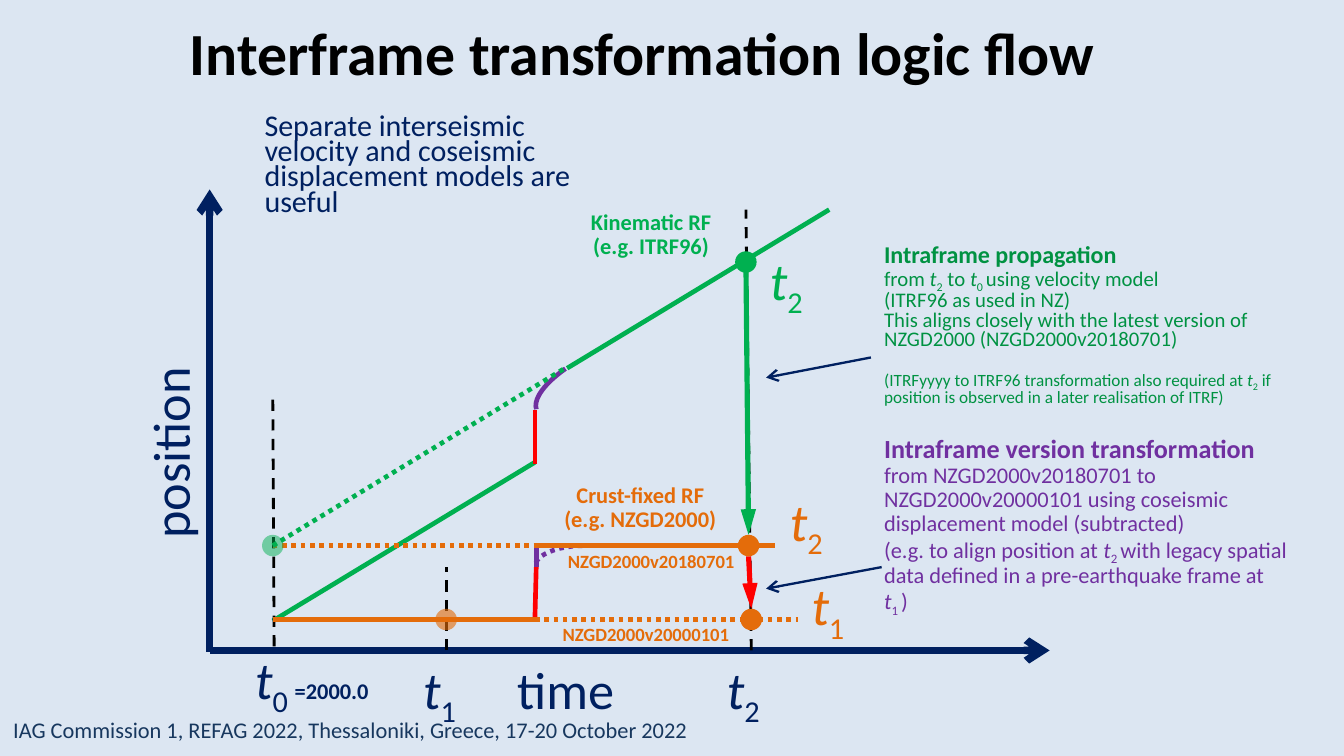
"""Build the slide that explains interframe transformation logic flow."""
from lxml import etree
from pptx import Presentation
from pptx.dml.color import RGBColor
from pptx.enum.dml import MSO_LINE
from pptx.enum.shapes import MSO_CONNECTOR, MSO_SHAPE
from pptx.enum.text import MSO_ANCHOR, PP_ALIGN
from pptx.oxml.ns import qn
from pptx.util import Inches, Pt

STRAIGHT, ARC, OVAL = MSO_CONNECTOR.STRAIGHT, MSO_SHAPE.ARC, MSO_SHAPE.OVAL
DASH, DOT = MSO_LINE.DASH, MSO_LINE.ROUND_DOT
TOP, MIDDLE = MSO_ANCHOR.TOP, MSO_ANCHOR.MIDDLE
LEFT, CENTER = PP_ALIGN.LEFT, PP_ALIGN.CENTER

THEME = {
    "font": "Calibri",
    "color": {"bg": "DCE6F2", "navy": "002060", "green": "00B050", "red": "FF0000",
              "purple": "7030A0", "orange": "E46C0A", "black": "000000",
              "leaf": "009242", "footer": "17375E"},
    "size": {"title": 32, "axis": 28, "lead": 16.1, "head": 14, "subhead": 12.9,
             "body": 12, "detail": 11.1, "frame": 10, "note": 9.2},
    "line": {"axis": 4, "arrow": 2.75, "track": 2.5, "guide": 1.5, "callout": 1.25},
    "head": {"open": {"type": "arrow"}, "solid": {"type": "triangle", "len": "lg"}},
}

# x1, y1, x2, y2, colour, weight, dash, arrowhead
LINES = [
    (1.56, 4.85, 1.56, 1.41, "navy", "axis", None, "open"),
    (1.56, 4.84, 7.81, 4.84, "navy", "axis", None, "open"),
    (2.03, 4.62, 3.98, 3.44, "green", "track", None, None),
    (3.98, 3.45, 3.98, 3.05, "red", "track", None, None),
    (2.04, 4.81, 2.03, 2.97, "black", "guide", DASH, None),
    (5.59, 4.84, 5.55, 1.56, "black", "guide", DASH, None),
    (3.32, 4.84, 3.32, 4.22, "black", "guide", DASH, None),
    (3.98, 4.61, 3.99, 4.22, "red", "track", None, None),
    (3.99, 4.22, 3.99, 4.06, "purple", "track", None, None),
    (3.98, 4.06, 5.77, 4.06, "orange", "track", None, None),
    (2.03, 4.06, 3.98, 4.06, "orange", "track", DOT, None),
    (5.55, 1.95, 5.57, 3.98, "green", "arrow", None, "solid"),
    (2.03, 4.61, 3.98, 4.61, "orange", "track", None, None),
    (3.98, 4.61, 5.94, 4.61, "orange", "track", DOT, None),
    (4.22, 2.74, 6.17, 1.56, "green", "track", None, None),
    (2.03, 4.06, 4.22, 2.73, "green", "track", DOT, None),
    (5.57, 4.14, 5.59, 4.53, "red", "arrow", None, "solid"),
    (6.48, 2.66, 5.70, 2.81, "navy", "callout", None, "open"),
    (6.56, 4.22, 5.70, 4.38, "navy", "callout", None, "open"),
]

# left, top, width, height, rotation, adjustments, dash
ARCS = [
    (3.94, 2.63, 1.02, 0.39, 153.2, (188.77, 215.25), None),
    (3.98, 4.06, 0.73, 0.31, 180, (164.95, 215.25), DOT),
]

# centre x, centre y, colour, opacity in percent
DOTS = [
    (5.55, 1.95, "green", 100),
    (2.03, 4.06, "green", 49),
    (5.57, 4.06, "orange", 100),
    (3.32, 4.61, "orange", 61),
    (5.59, 4.61, "orange", 100),
]
DOT_SIZE = 0.16

# left, top, width, colour of one axis-size label, text
LABELS = [
    (3.75, 4.84, 1.48, "navy", "time"),
    (5.31, 4.84, 0.70, "navy", "{t2}"),
    (3.05, 4.84, 0.70, "navy", "{t1}"),
    (5.63, 1.80, 0.63, "green", "{t2}"),
    (5.78, 3.59, 0.63, "orange", "{t2}"),
    (5.94, 4.22, 0.63, "orange", "{t1}"),
]
LABEL_H = 0.57

# box, colour, alignment, anchor, line spacing, rotation, paragraphs of (text, size, bold) runs;
# {t2} is an italic t with a subscript 2
TEXTS = [
    ((0.22, 2.78, 2.08, LABEL_H), "navy", LEFT, TOP, 1, 270, [[("position", "axis", False)]]),
    ((1.80, 4.77, 1.56, LABEL_H), "navy", LEFT, TOP, 1, 0,
     [[("{t0 }", "axis", False), ("=2000.0", "body", True)]]),
    ((0.47, 0, 8.62, 0.77), "black", CENTER, MIDDLE, 1, 0,
     [[("Interframe transformation logic flow", "title", True)]]),
    ((1.87, 0.86, 2.73, 0.76), "navy", LEFT, MIDDLE, 0.7, 0,
     [[("Separate interseismic velocity and coseismic displacement models are useful",
        "lead", False)]]),
    ((6.48, 3.13, 3.2, 1.56), "purple", LEFT, MIDDLE, 0.9, 0, [
        [("Intraframe version transformation", "head", True)],
        [("from NZGD2000v20180701 to NZGD2000v20000101 using coseismic "
          "displacement model (subtracted)", "body", False)],
        [("(e.g. to align position at {t2 }with legacy spatial data defined in a "
          "pre-earthquake frame at {t1 })", "body", False)]]),
    ((3.91, 1.41, 1.87, 0.68), "green", CENTER, MIDDLE, 0.9, 0,
     [[("Kinematic RF", "body", True)], [("(e.g. ITRF96)", "body", True)]]),
    ((3.83, 3.44, 1.87, 0.68), "orange", CENTER, MIDDLE, 0.9, 0,
     [[("Crust-fixed RF", "body", True)], [("(e.g. NZGD2000)", "body", True)]]),
    ((3.83, 4.45, 1.95, 0.55), "orange", CENTER, MIDDLE, 0.9, 0,
     [[("NZGD2000v20000101", "frame", True)]]),
    ((3.91, 3.91, 1.87, 0.55), "orange", CENTER, MIDDLE, 0.9, 0,
     [[("NZGD2000v20180701", "frame", True)]]),
    ((6.48, 1.8, 3.36, 1.25), "leaf", LEFT, MIDDLE, 0.8, 0, [
        [("Intraframe propagation", "subhead", True)],
        [("from {t2} to {t0 }using velocity model", "detail", False)],
        [("(ITRF96 as used in NZ)", "detail", False)],
        [("This aligns closely with the latest version of NZGD2000 (NZGD2000v20180701)",
          "detail", False)],
        [("(ITRFyyyy to ITRF96 transformation also required at {t2} if", "note", False)],
        [("position is observed in a later realisation of ITRF)", "note", False)]]),
    ((0, 5.28, 7, 0.34), "footer", LEFT, TOP, 1, 0,
     [[("IAG Commission 1, REFAG 2022, Thessaloniki, Greece, 17-20 October 2022",
        "body", False)]]),
]
NOTE_START, NOTE_GAP = "(ITRFyyyy", 10.8


def rgb(name):
    return RGBColor.from_string(THEME["color"][name])


def style_line(line, color, weight, dash):
    line.color.rgb = rgb(color)
    for key, value in {"width": Pt(THEME["line"][weight]), "dash_style": dash}.items():
        setattr(line, key, value)


def add_line(s, x1, y1, x2, y2, color, weight, dash, head):
    sp = s.shapes.add_connector(STRAIGHT, *map(Inches, (x1, y1, x2, y2)))
    style_line(sp.line, color, weight, dash)
    if head:
        etree.SubElement(sp.line._get_or_add_ln(), qn("a:tailEnd"), THEME["head"][head])
    etree.SubElement(sp._element.spPr, qn("a:effectLst"))


def add_arc(s, x, y, w, h, rotation, angles, dash):
    sp = s.shapes.add_shape(ARC, *map(Inches, (x, y, w, h)))
    sp.shadow.inherit = False
    sp.rotation = rotation
    sp.fill.background()
    sp._element.spPr.find(qn("a:xfrm")).set("flipV", "1")
    for i, angle in enumerate(angles):
        sp.adjustments[i] = angle
    style_line(sp.line, "purple", "track", dash)


def add_dot(s, cx, cy, color, opacity):
    corner = (cx - DOT_SIZE / 2, cy - DOT_SIZE / 2)
    sp = s.shapes.add_shape(OVAL, *map(Inches, (*corner, DOT_SIZE, DOT_SIZE)))
    sp.shadow.inherit = False
    sp.line.fill.background()
    sp.fill.solid()
    sp.fill.fore_color.rgb = rgb(color)
    if opacity < 100:
        clr = sp._element.spPr.find(".//" + qn("a:srgbClr"))
        etree.SubElement(clr, qn("a:alpha"), val=str(opacity * 1000))


def add_run(p, text, color, size, bold, italic=False, sub=False):
    r = p.add_run()
    r.text = text
    fmt = {"name": THEME["font"], "size": Pt(THEME["size"][size]), "bold": bold, "italic": italic}
    for key, value in fmt.items():
        setattr(r.font, key, value)
    r.font.color.rgb = rgb(color)
    if sub:
        r.font._element.set("baseline", "-25000")


def add_text(s, box, color, align, anchor, spacing, rotation, paragraphs):
    sp = s.shapes.add_textbox(*map(Inches, box))
    sp.rotation = rotation
    tf = sp.text_frame
    tf.word_wrap, tf.vertical_anchor = True, anchor
    for i, runs in enumerate(paragraphs):
        p = tf.add_paragraph() if i else tf.paragraphs[0]
        p.alignment, p.line_spacing = align, spacing
        if runs[0][0].startswith(NOTE_START):
            p.space_before = Pt(NOTE_GAP)
        for text, size, bold in runs:
            for j, part in enumerate(text.replace("}", "{").split("{")):
                if j % 2:
                    add_run(p, part[0], color, size, bold, italic=True)
                    add_run(p, part[1:], color, size, bold, sub=True)
                elif part:
                    add_run(p, part, color, size, bold)


def main():
    prs = Presentation()
    prs.slide_width = Inches(10)
    prs.slide_height = prs.slide_width * 9 // 16
    s = prs.slides.add_slide(prs.slide_layouts[6])
    s.background.fill.solid()
    s.background.fill.fore_color.rgb = rgb("bg")
    for add, rows in ((add_arc, ARCS), (add_line, LINES), (add_dot, DOTS), (add_text, TEXTS)):
        for row in rows:
            add(s, *row)
    for x, y, w, color, text in LABELS:
        add_text(s, (x, y, w, LABEL_H), color, LEFT, TOP, 1, 0, [[(text, "axis", False)]])
    prs.save("out.pptx")


if __name__ == "__main__":
    main()
